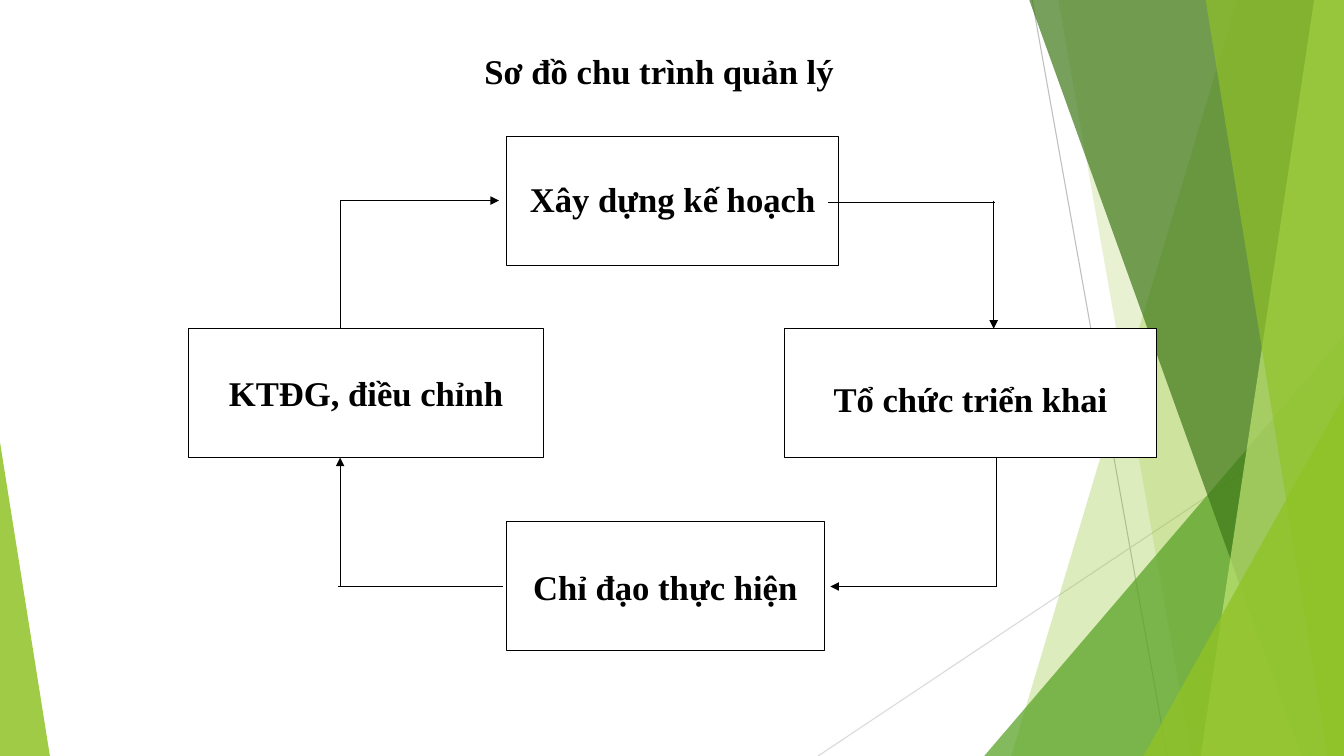
from pptx import Presentation
from pptx.dml.color import RGBColor
from pptx.enum.shapes import MSO_CONNECTOR, MSO_SHAPE
from pptx.enum.text import MSO_ANCHOR, MSO_AUTO_SIZE, PP_ALIGN
from pptx.oxml.ns import qn
from pptx.util import Cm, Pt
from lxml.etree import SubElement

WIDTH, HEIGHT = 32.84, 18.47
BLACK, WHITE, LIME = "000000", "FFFFFF", "90C226"

presentation = Presentation()
presentation.slide_width, presentation.slide_height = Cm(WIDTH), Cm(HEIGHT)
slide = presentation.slides.add_slide(presentation.slide_layouts[5])
shapes = slide.shapes


def paint(target, color, opacity=100):
    """Give a fill, line or font a solid colour, optionally see-through."""
    if hasattr(target, "solid"):
        target.solid()
        target = target.fore_color
    elif hasattr(target, "color"):
        target = target.color
    target.rgb = RGBColor.from_string(color)
    if opacity < 100:
        color_element = next(slide.element.iter(qn("a:srgbClr")), None)
        color_element = shapes[-1].element.spPr.find(qn("a:solidFill"))[0]
        SubElement(color_element, qn("a:alpha"), val=str(opacity * 1000))


def draw_line(start, end, color, arrow=False):
    """Draw a thin straight line, with an arrowhead at its end if asked."""
    x1, y1, x2, y2 = map(Cm, start + end)
    line = shapes.add_connector(MSO_CONNECTOR.STRAIGHT, x1, y1, x2, y2)
    paint(line.line, color)
    line.line.width = Pt(0.75)
    properties = line.element.spPr
    if arrow:
        SubElement(properties.find(qn("a:ln")), qn("a:tailEnd"), type="triangle")
    SubElement(properties, qn("a:effectLst"))


# Thin background lines
draw_line((25.22, 0), (28.52, HEIGHT), "BFBFBF")
draw_line((32.82, 9.91), (19.99, HEIGHT), "D9D9D9")

# Green facets: bands (top x, bottom x) reach the right edge,
# triangles (left, top, width, apex) stand on the bottom edge
facets = [
    ((30.23, 24.71), LIME, 30),
    ((25.86, 29.11), LIME, 20),
    ((24.05, 8.2, 8.79, 1), "54A021", 72),
    ((25.15, 31.8), "3F7819", 70),
    ((32.11, 29.34), "C0E474", 70),
    ((29.46, 32.44), LIME, 65),
    ((27.94, 9.68, 4.9, 1), LIME, 80),
    ((0, 10.8, 1.22, 0), LIME, 85),
]
for geometry, color, opacity in facets:
    if len(geometry) == 2:
        top_x, bottom_x = geometry
        builder = shapes.build_freeform(Cm(top_x), Cm(0))
        corners = [(WIDTH, 0), (WIDTH, HEIGHT), (bottom_x, HEIGHT)]
        builder.add_line_segments([(Cm(x), Cm(y)) for x, y in corners])
        facet = builder.convert_to_shape()
    else:
        left, top, width, apex = geometry
        facet = shapes.add_shape(MSO_SHAPE.ISOSCELES_TRIANGLE, Cm(left), Cm(top),
                                 Cm(width), Cm(HEIGHT - top))
        facet.adjustments[0] = apex
    facet.shadow.inherit = False
    facet.line.fill.background()
    paint(facet.fill, color, opacity)

# Title
title = shapes.title
title.left, title.top, title.width, title.height = Cm(7.9), Cm(0.89), Cm(16.41), Cm(1.37)
title.text_frame.vertical_anchor = MSO_ANCHOR.TOP
title_paragraph = title.text_frame.paragraphs[0]
title_paragraph.line_spacing = 1.2
title_paragraph.space_before = title_paragraph.space_after = Pt(3)
labels = [(title, "Sơ đồ chu trình quản lý")]

# Steps of the cycle: left, top, width, downward shift of the text
steps = [
    ("KTĐG, điều chỉnh", 4.6, 8.03, 8.69, 0),
    ("Tổ chức triển khai", 19.18, 8.03, 9.07, 0.13),
    ("Xây dựng kế hoạch", 12.37, 3.33, 8.13, -0.06),
    ("Chỉ đạo thực hiện", 12.37, 12.75, 7.77, 0),
]
for text, left, top, width, shift in steps:
    box = shapes.add_shape(MSO_SHAPE.RECTANGLE, Cm(left), Cm(top), Cm(width), Cm(3.15))
    box.shadow.inherit = False
    paint(box.fill, WHITE)
    paint(box.line, BLACK)
    box.line.width = Pt(0.75)
    box.text_frame.vertical_anchor = MSO_ANCHOR.MIDDLE
    box.text_frame.margin_top = Cm(0.2 + shift)
    box.text_frame.margin_bottom = Cm(0.2 - shift)
    labels.append((box, text))

# Wording of the title and the steps
for shape, text in labels:
    shape.text_frame.word_wrap = True
    shape.text_frame.auto_size = MSO_AUTO_SIZE.NONE
    paragraph = shape.text_frame.paragraphs[0]
    paragraph.alignment = PP_ALIGN.CENTER
    run = paragraph.add_run()
    run.text = text
    run.font.name, run.font.size, run.font.bold = "Times New Roman", Pt(24), True
    paint(run.font, BLACK)

# Bent arrows between the steps: a plain part, then a part with the arrowhead
arrows = [
    ((8.31, 8.03), (8.31, 4.9), (8.31, 4.9), (12.19, 4.9)),
    ((20.24, 4.95), (24.31, 4.95), (24.28, 4.9), (24.28, 8.03)),
    ((24.36, 11.18), (24.36, 14.33), (24.36, 14.33), (20.29, 14.33)),
    ((12.29, 14.33), (8.26, 14.33), (8.31, 14.33), (8.31, 11.18)),
]
for start, bend, arrow_start, tip in arrows:
    draw_line(start, bend, BLACK)
    draw_line(arrow_start, tip, BLACK, arrow=True)

presentation.save("out.pptx")
